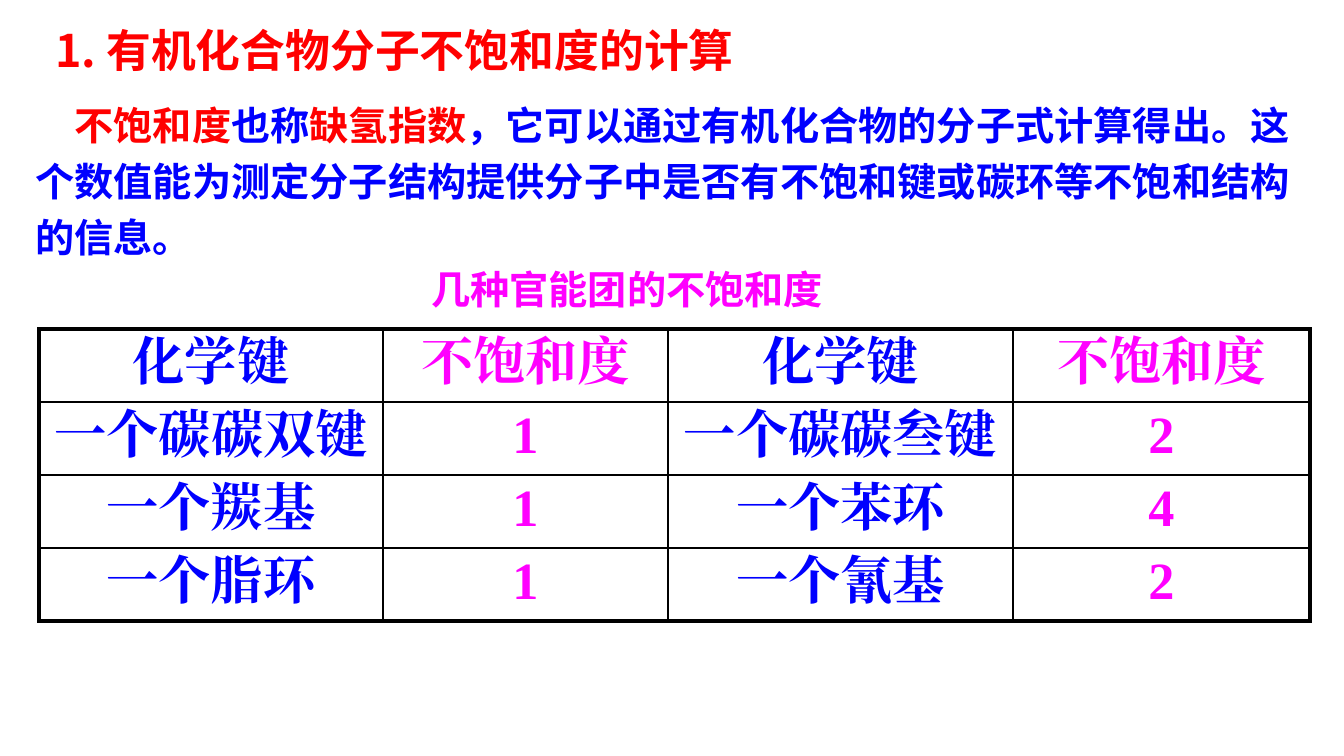
from lxml import etree
from pptx import Presentation
from pptx import util as u
from pptx.dml.color import RGBColor
from pptx.enum import text
from pptx.oxml import ns

PX = 914400 / 134.4
SANS, SERIF = "Noto Sans CJK SC", "Times New Roman"
RED, BLUE, MAGENTA, BLACK = "FF0000", "0000FF", "FF00FF", "000000"


def px(length):
    return u.Emu(round(length * PX))


def color(hex_code):
    return RGBColor.from_string(hex_code)


def set_font(paragraph, name, size, hex_code=None):
    """Bold font for Latin and East Asian letters of a whole paragraph."""
    font = paragraph.font
    font.name, font.size, font.bold = name, u.Pt(size), True
    if hex_code:
        font.color.rgb = color(hex_code)
    properties = paragraph._p.pPr.find(ns.qn("a:defRPr"))
    latin = properties.find(ns.qn("a:latin"))
    east_asian = etree.Element(ns.qn("a:ea"), typeface=name)
    latin.addnext(east_asian)


def add_text(slide, box, runs, size, wrap=False, line_spacing=None):
    """Text box holding one paragraph of (wording, colour) runs."""
    shape = slide.shapes.add_textbox(*map(px, box))
    frame = shape.text_frame
    frame.word_wrap = wrap
    frame.auto_size = text.MSO_AUTO_SIZE.SHAPE_TO_FIT_TEXT
    paragraph = frame.paragraphs[0]
    if line_spacing:
        paragraph.line_spacing = line_spacing
    for wording, hex_code in runs:
        run = paragraph.add_run()
        run.text = wording
        run.font.color.rgb = color(hex_code)
    set_font(paragraph, SANS, size)


def set_borders(cell, widths):
    """Solid black borders; widths in points: left, right, top, bottom."""
    properties = cell._tc.get_or_add_tcPr()
    for index, (side, width) in enumerate(zip("LRTB", widths)):
        line = etree.Element(ns.qn(f"a:ln{side}"), w=str(u.Pt(width)))
        fill = etree.SubElement(line, ns.qn("a:solidFill"))
        etree.SubElement(fill, ns.qn("a:srgbClr"), val=BLACK)
        properties.insert(index, line)


def fill_cell(cell, wording, hex_code):
    cell.fill.background()
    cell.margin_left = cell.margin_right = px(11)
    cell.margin_top = cell.margin_bottom = px(5)
    paragraph = cell.text_frame.paragraphs[0]
    paragraph.text = wording
    paragraph.alignment = text.PP_ALIGN.CENTER
    # Space before as a share of the text size
    paragraph.space_before = u.Pt(0)
    spacing = paragraph._p.pPr.find(ns.qn("a:spcBef"))
    spacing.remove(spacing[0])
    etree.SubElement(spacing, ns.qn("a:spcPct"), val="20000")
    set_font(paragraph, SERIF, 28, hex_code)


def add_bond_table(slide, box, column_widths, rows):
    """Bond names in blue, their values in magenta, with a thick outer frame."""
    last_row, last_column = len(rows) - 1, len(column_widths) - 1
    table = slide.shapes.add_table(
        len(rows), len(column_widths), *map(px, box)).table
    table.first_row = table.horz_banding = False
    for column, width in zip(table.columns, column_widths):
        column.width = px(width)
    for r, row in enumerate(rows):
        table.rows[r].height = px(box[3] / len(rows))
        for c, wording in enumerate(row):
            cell = table.cell(r, c)
            fill_cell(cell, wording, MAGENTA if c % 2 else BLUE)
            outer = (c == 0, c == last_column, r == 0, r == last_row)
            set_borders(cell, [2.25 if edge else 1 for edge in outer])


def build_slide(presentation):
    slide = presentation.slides.add_slide(presentation.slide_layouts[6])
    # Heading
    add_text(slide, (42, 16, 724, 67),
             [("1. 有机化合物分子不饱和度的计算", RED)], 24)
    # Definition
    add_text(slide, (22, 85, 1310, 184), [
        ("\u3000".replace("\u3000", "　"), BLUE),
        ("不饱和度", RED),
        ("也称", BLUE),
        ("缺氢指数", RED),
        ("，它可以通过有机化合物的分子式计算得出。这个数值能为测定分子结构"
         "提供分子中是否有不饱和键或碳环等不饱和结构的信息。", BLUE),
    ], 21, wrap=True, line_spacing=1.2)
    # Table and its caption
    add_bond_table(slide, (39, 329, 1271, 292), (344, 285, 345, 297), [
        ("化学键", "不饱和度", "化学键", "不饱和度"),
        ("一个碳碳双键", "1", "一个碳碳叁键", "2"),
        ("一个羰基", "1", "一个苯环", "4"),
        ("一个脂环", "1", "一个氰基", "2"),
    ])
    add_text(slide, (418, 259, 421, 60),
             [("几种官能团的不饱和度", MAGENTA)], 21)


def main():
    presentation = Presentation()
    presentation.slide_width, presentation.slide_height = px(1344), px(756)
    build_slide(presentation)
    presentation.save("out.pptx")


if __name__ == "__main__":
    main()
